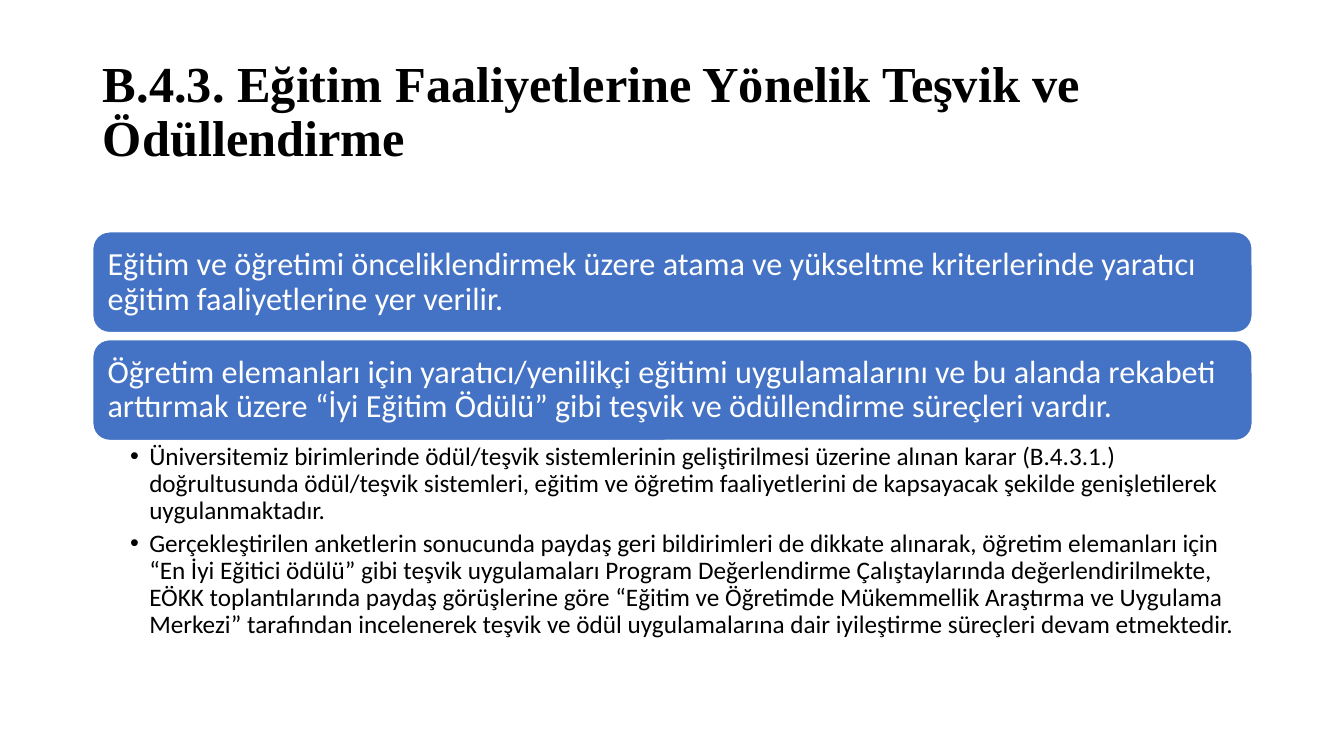
from lxml import etree
from pptx import Presentation
from pptx import util as u
from pptx.dml.color import RGBColor
from pptx.enum import shapes, text
from pptx.oxml.ns import qn

LEFT, WIDTH = 0.92, 11.5
BANNER_TOP, BANNER_HEIGHT, BANNER_STEP = 2.3, 1, 1.07

TITLE = "B.4.3. Eğitim Faaliyetlerine Yönelik Teşvik ve Ödüllendirme"
BANNERS = [
    "Eğitim ve öğretimi önceliklendirmek üzere atama ve yükseltme kriterlerinde "
    "yaratıcı eğitim faaliyetlerine yer verilir.",
    "Öğretim elemanları için yaratıcı/yenilikçi eğitimi uygulamalarını ve bu alanda "
    "rekabeti arttırmak üzere “İyi Eğitim Ödülü” gibi teşvik ve ödüllendirme "
    "süreçleri vardır.",
]
BULLETS = [
    "Üniversitemiz birimlerinde ödül/teşvik sistemlerinin geliştirilmesi üzerine "
    "alınan karar (B.4.3.1.) doğrultusunda ödül/teşvik sistemleri, eğitim ve öğretim "
    "faaliyetlerini de kapsayacak şekilde genişletilerek uygulanmaktadır.",
    "Gerçekleştirilen anketlerin sonucunda paydaş geri bildirimleri de dikkate "
    "alınarak, öğretim elemanları için “En İyi Eğitici ödülü” gibi teşvik uygulamaları "
    "Program Değerlendirme Çalıştaylarında değerlendirilmekte, EÖKK toplantılarında "
    "paydaş görüşlerine göre “Eğitim ve Öğretimde Mükemmellik Araştırma ve Uygulama "
    "Merkezi” tarafından incelenerek teşvik ve ödül uygulamalarına dair iyileştirme "
    "süreçleri devam etmektedir.",
]


def colour(value):
    return RGBColor.from_string(value)


def write(box, lines, top, height, margins, anchor, font, size, ink, bold=False, after=0):
    """Place the box and fill it with left-aligned paragraphs; margins run left, top, right, bottom."""
    place = {"left": LEFT, "top": top, "width": WIDTH, "height": height}
    for name, value in place.items():
        setattr(box, name, u.Inches(value))
    frame = box.text_frame
    frame.text = "\n".join(lines)
    frame_format = {"word_wrap": True, "auto_size": text.MSO_AUTO_SIZE.NONE,
                    "vertical_anchor": anchor}
    for side, value in zip(("left", "top", "right", "bottom"), margins):
        frame_format[f"margin_{side}"] = u.Inches(value)
    for name, value in frame_format.items():
        setattr(frame, name, value)
    para_format = {"alignment": text.PP_ALIGN.LEFT, "line_spacing": 0.9,
                   "space_before": u.Pt(0), "space_after": u.Pt(after)}
    font_format = {"name": font, "size": u.Pt(size), "bold": bold}
    for para in frame.paragraphs:
        for name, value in para_format.items():
            setattr(para, name, value)
        for span in para.runs:
            for name, value in font_format.items():
                setattr(span.font, name, value)
            span.font.color.rgb = colour(ink)


deck = Presentation()
deck.slide_width, deck.slide_height = u.Inches(13.33), u.Inches(7.5)
page = deck.slides.add_slide(deck.slide_layouts.get_by_name("Title and Content"))
middle, top_anchor = text.MSO_ANCHOR.MIDDLE, text.MSO_ANCHOR.TOP

write(page.shapes.title, [TITLE], 0.4, 1.45, (0.1, 0.05, 0.1, 0.05), middle,
      "Times New Roman", 36, "000000", bold=True)

for index, sentence in enumerate(BANNERS):
    banner = page.shapes.add_shape(shapes.MSO_SHAPE.ROUNDED_RECTANGLE, 0, 0, 0, 0)
    banner.shadow.inherit = False
    banner.fill.solid()
    banner.fill.fore_color.rgb = colour("4472C4")
    banner.line.color.rgb = colour("FFFFFF")
    banner.line.width = u.Pt(1)
    write(banner, [sentence], BANNER_TOP + index * BANNER_STEP, BANNER_HEIGHT,
          (0.1, 0.1, 0.1, 0.1), middle, "Calibri", 23, "FFFFFF")

details = page.placeholders[1]
write(details, BULLETS, 4.37, 2.08, (0.37, 0.03, 0.18, 0.03), top_anchor,
      "Calibri", 18, "000000", after=3.6)
for para in details.text_frame.paragraphs:
    para.level = 1
    properties = para._p.get_or_add_pPr()
    properties.set("marL", str(u.Inches(0.19)))
    properties.set("indent", str(u.Inches(-0.19)))
    etree.SubElement(properties, qn("a:buFont")).set("typeface", "Arial")
    etree.SubElement(properties, qn("a:buChar")).set("char", "•")

deck.save("out.pptx")
